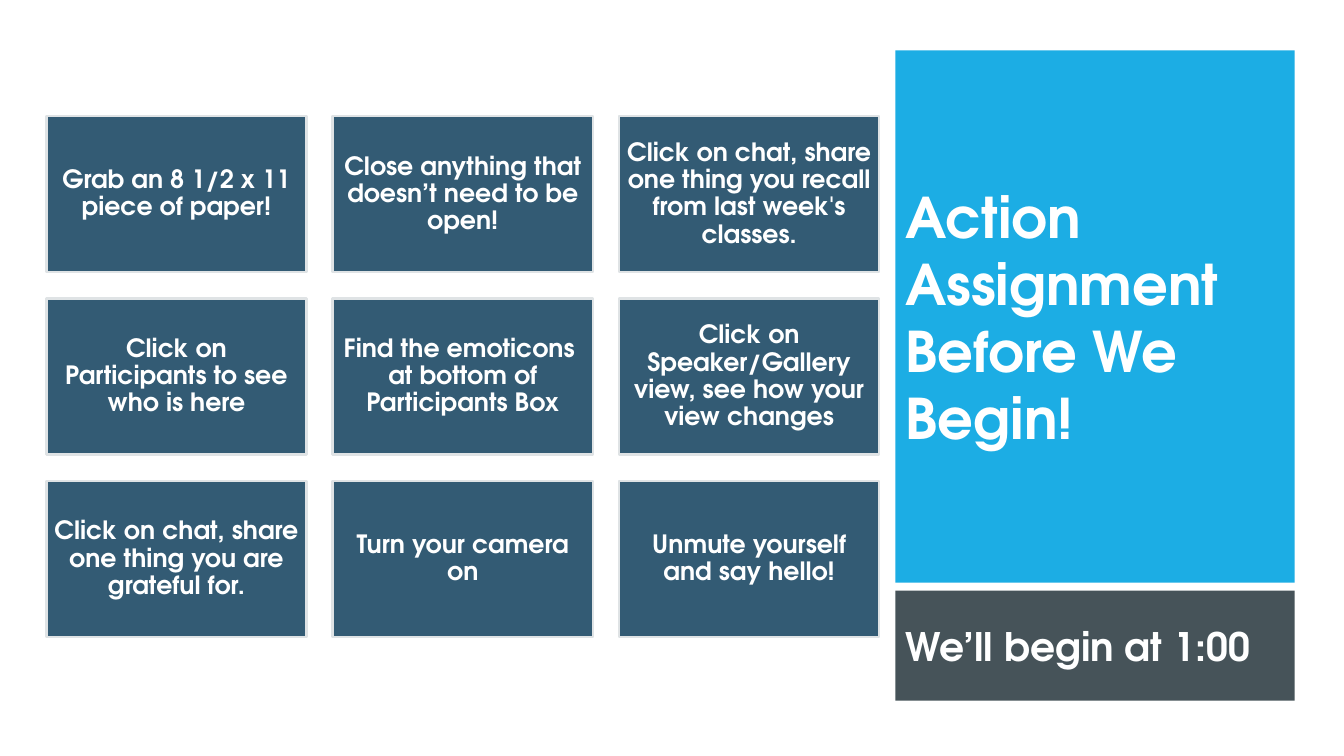
import pptx
import pptx.util
import pptx.dml.color
import pptx.enum.shapes
import pptx.enum.text

Inches = pptx.util.Inches
Pt = pptx.util.Pt
ALIGN = pptx.enum.text.PP_ALIGN

COLORS = {
    "title": "1CADE4",
    "start_time": "465359",
    "card": "335B74",
    "card_line": "DFE3E5",
    "text": "FFFFFF",
}

ACTIONS = [
    "Grab an 8 1/2 x 11 piece of paper!",
    "Close anything that doesn’t need to be open!",
    "Click on chat, share one thing you recall from last week's classes.",
    "Click on Participants to see who is here",
    "Find the emoticons  at bottom of Participants Box",
    "Click on Speaker/Gallery view, see how your view changes",
    "Click on chat, share one thing you are grateful for.",
    "Turn your camera on",
    "Unmute yourself and say hello!",
]


class SlideBuilder:
    font = "TeX Gyre Adventor"

    def __init__(self, slide):
        self.slide = slide

    def rgb(self, name):
        return pptx.dml.color.RGBColor.from_string(COLORS[name])

    def fill(self, sp, color):
        sp.fill.solid()
        sp.fill.fore_color.rgb = self.rgb(color)

    def set_text(self, sp, text, size, align, inset_x, inset_y, spacing=1.0):
        """Put one bold paragraph, centred vertically, into the shape."""
        tf = sp.text_frame
        tf.word_wrap = True
        tf.auto_size = pptx.enum.text.MSO_AUTO_SIZE.NONE
        tf.vertical_anchor = pptx.enum.text.MSO_ANCHOR.MIDDLE
        tf.margin_left = tf.margin_right = Inches(inset_x)
        tf.margin_top = tf.margin_bottom = Inches(inset_y)
        p = tf.paragraphs[0]
        p.alignment = align
        p.line_spacing = spacing
        p.space_before = Pt(0)
        r = p.add_run()
        r.text = text
        r.font.name = self.font
        r.font.size = Pt(size)
        r.font.bold = True
        r.font.color.rgb = self.rgb("text")

    def panel(self, sp, text, top, height, size, color):
        """Turn a placeholder into a filled panel of the right column."""
        sp.left, sp.top = Inches(8.88), Inches(top)
        sp.width, sp.height = Inches(3.96), Inches(height)
        self.fill(sp, color)
        self.set_text(sp, text, size, ALIGN.LEFT, 0.1, 0)

    def card(self, text, left, top, width, height):
        sp = self.slide.shapes.add_shape(
            pptx.enum.shapes.MSO_SHAPE.RECTANGLE,
            Inches(left), Inches(top), Inches(width), Inches(height))
        sp.shadow.inherit = False
        self.fill(sp, "card")
        sp.line.color.rgb = self.rgb("card_line")
        sp.line.width = Pt(1.75)
        self.set_text(sp, text, 18, ALIGN.CENTER, 0.07, 0.07, 0.9)

    def card_grid(self, texts, columns, left, top, width, height, gap):
        for i, text in enumerate(texts):
            row, col = divmod(i, columns)
            self.card(text, left + col * (width + gap),
                      top + row * (height + gap), width, height)


def main():
    prs = pptx.Presentation()
    prs.slide_width, prs.slide_height = Inches(13.33), Inches(7.5)
    # Content with Caption: its caption placeholder has no bullets
    s = prs.slides.add_slide(prs.slide_layouts[7])
    content, caption = s.placeholders[1], s.placeholders[2]
    content.element.getparent().remove(content.element)

    builder = SlideBuilder(s)
    builder.panel(caption, "We’ll begin at 1:00", 5.86, 1.09, 28, "start_time")
    builder.panel(s.shapes.title, "Action Assignment Before We Begin!",
                  0.5, 5.28, 40, "title")
    builder.card_grid(ACTIONS, columns=3, left=0.46, top=1.15,
                      width=2.58, height=1.55, gap=0.26)
    prs.save("out.pptx")


if __name__ == "__main__":
    main()
